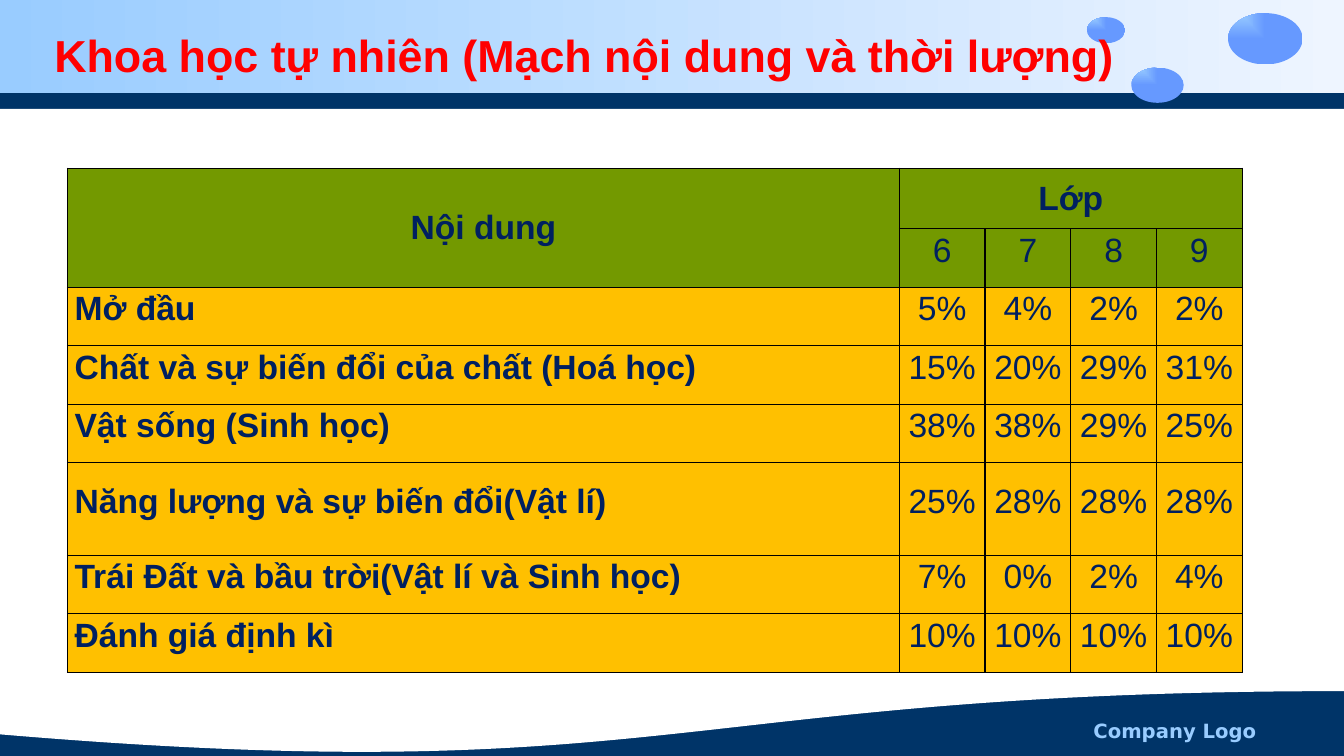
import lxml.etree
import pptx
import pptx.dml.color
import pptx.enum.shapes
import pptx.enum.text
import pptx.oxml.ns
import pptx.util

Inches = pptx.util.Inches
Pt = pptx.util.Pt
Shape = pptx.enum.shapes.MSO_SHAPE
Align = pptx.enum.text.PP_ALIGN
Anchor = pptx.enum.text.MSO_ANCHOR
qn = pptx.oxml.ns.qn

NAVY, WHITE, SKY, BLUE = "003468", "FFFFFF", "99CCFF", "6699FF"
INK, GREEN, AMBER = "002060", "739900", "FFC000"

GRADES = ["6", "7", "8", "9"]
TOPICS = [
    ("Mở đầu", 5, 4, 2, 2),
    ("Chất và sự biến đổi của chất (Hoá học)", 15, 20, 29, 31),
    ("Vật sống (Sinh học)", 38, 38, 29, 25),
    ("Năng lượng và sự biến đổi(Vật lí)", 25, 28, 28, 28),
    ("Trái Đất và bầu trời(Vật lí và Sinh học)", 7, 0, 2, 4),
    ("Đánh giá định kì", 10, 10, 10, 10),
]
WIDTHS = [8.25] + [0.85] * len(GRADES)
HEIGHTS = [0.6] + [0.58] * 4 + [0.92] + [0.58] * 2
BUBBLES = [(10.78, 0.17, 0.38, 0.26), (11.22, 0.67, 0.52, 0.35),
           (12.18, 0.13, 0.74, 0.51)]


def color(code):
    return pptx.dml.color.RGBColor.from_string(code)


def paint(fill, code):
    fill.solid()
    fill.fore_color.rgb = color(code)


def blend(fill, first, last):
    """Fill with a left-to-right gradient."""
    fill.gradient()
    fill.gradient_angle = 0
    for stop, code in zip(fill.gradient_stops, (first, last)):
        stop.color.rgb = color(code)


def add_form(slide, kind, box):
    form = slide.shapes.add_shape(kind, *map(Inches, box))
    form.shadow.inherit = False
    form.line.fill.background()
    return form


def add_bubble(slide, box):
    form = add_form(slide, Shape.OVAL, box)
    blend(form.fill, SKY, BLUE)
    # Spread the gradient from the top left corner
    grad = form.fill._xPr.find(qn("a:gradFill"))
    grad.remove(grad.find(qn("a:lin")))
    spread = lxml.etree.SubElement(grad, qn("a:path"), {"path": "rect"})
    lxml.etree.SubElement(spread, qn("a:fillToRect"),
                          {"r": "100000", "b": "100000"})


def style(par, text, size, face, code, bold, align):
    par.text = text
    par.alignment = align
    par.font.size = Pt(size)
    par.font.name = face
    par.font.bold = bold
    par.font.color.rgb = color(code)


def add_text(slide, box, text, size, face, code, align, anchor):
    frame = slide.shapes.add_textbox(*map(Inches, box)).text_frame
    frame.word_wrap = True
    frame.vertical_anchor = anchor
    style(frame.paragraphs[0], text, size, face, code, True, align)


def add_edges(cell):
    props = cell._tc.get_or_add_tcPr()
    for spot, side in enumerate("LRTB"):
        line = lxml.etree.Element(qn("a:ln" + side), {"w": str(Pt(1))})
        solid = lxml.etree.SubElement(line, qn("a:solidFill"))
        lxml.etree.SubElement(solid, qn("a:srgbClr"), {"val": "000000"})
        props.insert(spot, line)


def set_cell(cell, text, bold, align, code, title=False):
    paint(cell.fill, code)
    add_edges(cell)
    cell.vertical_anchor = Anchor.MIDDLE
    cell.margin_left = cell.margin_right = Inches(0.07)
    cell.margin_top = cell.margin_bottom = 0
    par = cell.text_frame.paragraphs[0]
    style(par, text, 24, "Arial", INK, bold, align)
    par.space_before = Pt(3)
    par.space_after = Pt(6 if title else 3)
    if not title:
        par.line_spacing = Pt(16)


def add_grid(slide):
    box = (0.67, 1.67, sum(WIDTHS), sum(HEIGHTS))
    table = slide.shapes.add_table(len(HEIGHTS), len(WIDTHS),
                                   *map(Inches, box)).table
    table.first_row = table.horz_banding = False
    for col, width in zip(table.columns, WIDTHS):
        col.width = Inches(width)
    for row, height in zip(table.rows, HEIGHTS):
        row.height = Inches(height)

    # Two heading rows
    heads = [["Nội dung", "Lớp", "", "", ""], [""] + GRADES]
    for i, head in enumerate(heads):
        for j, text in enumerate(head):
            title = i == 0 or j == 0
            set_cell(table.cell(i, j), text, title, Align.CENTER, GREEN, title)
    table.cell(0, 0).merge(table.cell(1, 0))
    table.cell(0, 1).merge(table.cell(0, len(GRADES)))

    # Topics and their share in each grade
    for i, (topic, *shares) in enumerate(TOPICS, len(heads)):
        set_cell(table.cell(i, 0), topic, True, Align.JUSTIFY, AMBER)
        for j, share in enumerate(shares, 1):
            set_cell(table.cell(i, j), f"{share}%", False, Align.CENTER, AMBER)


def main():
    deck = pptx.Presentation()
    deck.slide_width = Inches(13.33)
    deck.slide_height = Inches(7.5)
    slide = deck.slides.add_slide(deck.slide_layouts[6])

    # Backdrop: banner, white page and wavy foot
    paint(slide.background.fill, NAVY)
    banner = add_form(slide, Shape.RECTANGLE, (0, 0, 13.33, 0.92))
    blend(banner.fill, SKY, "EEF5FF")
    page = add_form(slide, Shape.RECTANGLE, (0, 1.08, 13.33, 4))
    wave = add_form(slide, Shape.FLOWCHART_DOCUMENT, (0, 4.25, 13.33, 3.25))
    for form in (page, wave):
        paint(form.fill, WHITE)
    for box in BUBBLES:
        add_bubble(slide, box)

    # Content
    add_text(slide, (0.44, 0.17, 10.89, 0.75),
             "Khoa học tự nhiên (Mạch nội dung và thời lượng)",
             32, "Arial", "FF0000", Align.LEFT, Anchor.MIDDLE)
    add_grid(slide)
    add_text(slide, (8.56, 7.08, 4, 0.33), "Company Logo",
             14, "DejaVu Sans", SKY, Align.RIGHT, Anchor.TOP)
    deck.save("out.pptx")


if __name__ == "__main__":
    main()
